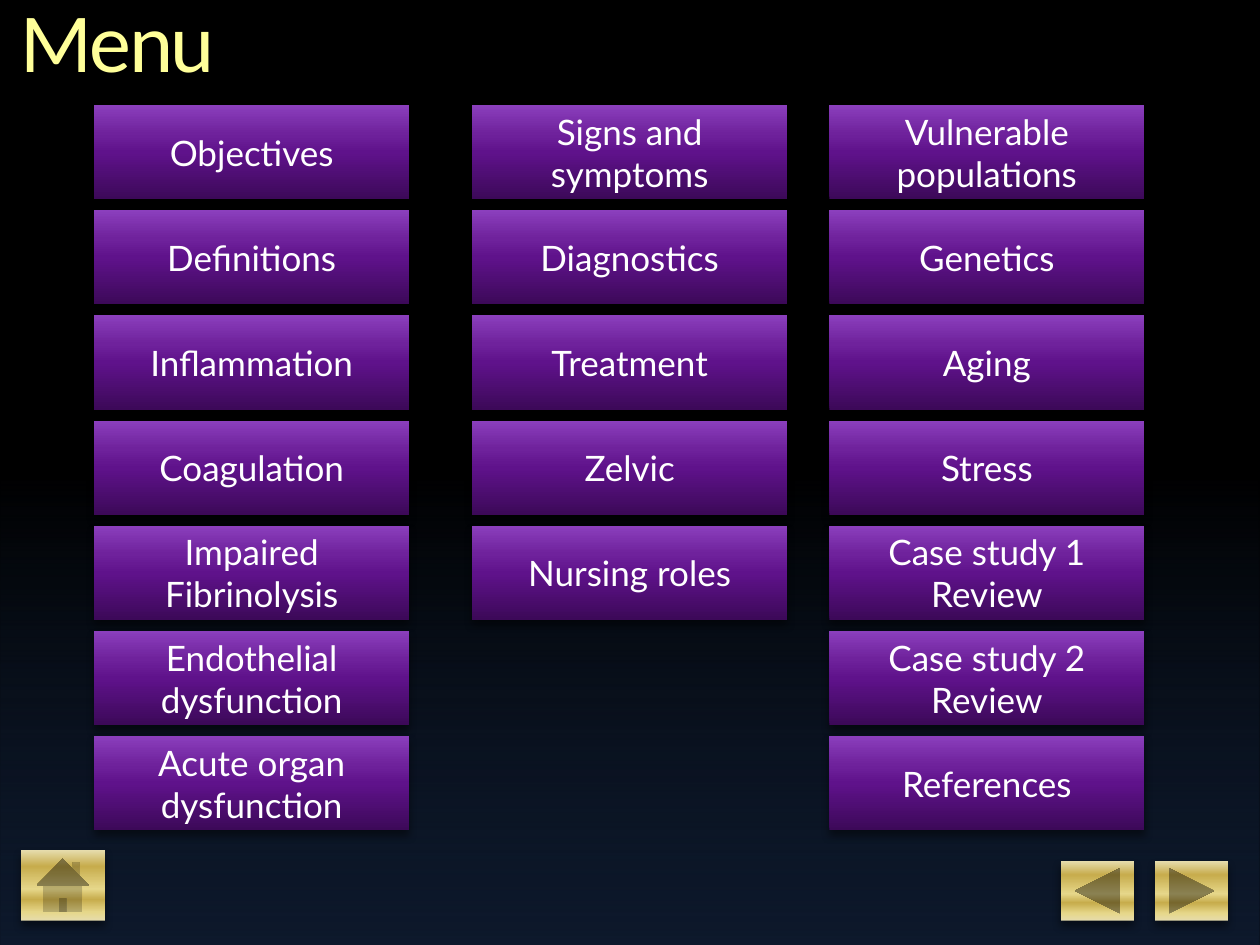
from lxml.etree import SubElement
from pptx import Presentation
from pptx.dml.color import RGBColor
from pptx.enum.shapes import MSO_SHAPE
from pptx.enum.text import MSO_ANCHOR, PP_ALIGN
from pptx.oxml.ns import qn
from pptx.util import Cm, Pt

BLACK = RGBColor(0x00, 0x00, 0x00)
WHITE = RGBColor(0xFF, 0xFF, 0xFF)
NAVY = RGBColor(0x1F, 0x3A, 0x67)
BLUE = RGBColor(0x35, 0x5F, 0xA3)
SKY = RGBColor(0x47, 0x72, 0xBA)
PALE = RGBColor(0x61, 0x90, 0xE1)
PLUM = RGBColor(0x3C, 0x09, 0x58)
GRAPE = RGBColor(0x5F, 0x12, 0x8B)
VIOLET = RGBColor(0x6F, 0x22, 0x9C)
LILAC = RGBColor(0x8B, 0x3F, 0xBD)
CREAM = RGBColor(0xE6, 0xDC, 0xAC)
STRAW = RGBColor(0xE6, 0xD7, 0x8A)
GOLD = RGBColor(0xC7, 0xAC, 0x4C)
IVORY = RGBColor(0xFF, 0xFF, 0xB9)
LEMON = RGBColor(0xFF, 0xFF, 0x99)
AMBER = RGBColor(0xF6, 0xAE, 0x1E)

NIGHT = [(0, NAVY, 42), (50, BLUE, 0), (70, SKY, 0), (100, PALE, 0)]
PURPLE = [(0, PLUM, 100), (50, GRAPE, 100), (70, VIOLET, 100), (100, LILAC, 100)]
METAL = [(0, CREAM, 100), (12, STRAW, 100), (30, GOLD, 100),
         (45, STRAW, 100), (77, GOLD, 100), (100, CREAM, 100)]
GLOW = [(0, IVORY, 100), (36, LEMON, 100), (86, AMBER, 100)]

MENU = [
    (1.9, ["Objectives", "Definitions", "Inflammation", "Coagulation",
           "Impaired Fibrinolysis", "Endothelial dysfunction",
           "Acute organ dysfunction"]),
    (9.52, ["Signs and symptoms", "Diagnostics", "Treatment", "Zelvic",
            "Nursing roles"]),
    (16.72, ["Vulnerable populations", "Genetics", "Aging", "Stress",
             "Case study 1 Review", "Case study 2 Review", "References"]),
]


def style(item, values):
    for name, value in values.items():
        setattr(item, name, value)


def tint(node, color, alpha):
    tone = SubElement(node, qn("a:srgbClr"), val=str(color))
    if alpha < 100:
        SubElement(tone, qn("a:alpha"), val=str(alpha * 1000))


def blend(fill, owner, stops, angle):
    fill.gradient()
    fill.gradient_angle = angle
    ramp = owner.find(qn("a:gradFill")).find(qn("a:gsLst"))
    for old in list(ramp):
        ramp.remove(old)
    for place, color, alpha in stops:
        tint(SubElement(ramp, qn("a:gs"), pos=str(place * 1000)), color, alpha)


def panel(slide, kind, box, stops):
    shape = slide.shapes.add_shape(kind, *map(Cm, box))
    blend(shape.fill, shape._element.spPr, stops, 90)
    shape.line.fill.background()
    shape.shadow.inherit = False
    return shape


def shade(shape):
    effects = shape._element.spPr.find(qn("a:effectLst"))
    cast = SubElement(effects, qn("a:outerShdw"), blurRad=str(Pt(5)),
                      dist=str(Pt(3)), dir="5400000", rotWithShape="0")
    tint(cast, BLACK, 45)


def backdrop(slide, box):
    style(slide.background.fill, {})
    slide.background.fill.solid()
    slide.background.fill.fore_color.rgb = BLACK
    shape = panel(slide, MSO_SHAPE.RECTANGLE, box, NIGHT)
    slide.shapes._spTree.insert(2, shape._element)


def heading(slide, box, text):
    title = slide.shapes.title
    style(title, dict(zip(("left", "top", "width", "height"), map(Cm, box))))
    frame = title.text_frame
    style(frame, {"margin_left": 0, "margin_top": 0, "margin_right": 0,
                  "margin_bottom": 0, "vertical_anchor": MSO_ANCHOR.TOP,
                  "word_wrap": True})
    line = frame.paragraphs[0]
    style(line, {"alignment": PP_ALIGN.LEFT, "line_spacing": 0.9})
    run = line.add_run()
    run.text = text
    style(run.font, {"size": Pt(48), "name": "Calibri"})
    props = run._r.get_or_add_rPr()
    props.set("spc", "-150")
    blend(run.font.fill, props, GLOW, 270)


def button(slide, box, text):
    shape = panel(slide, MSO_SHAPE.RECTANGLE, box, PURPLE)
    shade(shape)
    frame = shape.text_frame
    style(frame, {"word_wrap": True, "vertical_anchor": MSO_ANCHOR.MIDDLE})
    line = frame.paragraphs[0]
    line.alignment = PP_ALIGN.CENTER
    run = line.add_run()
    run.text = text
    style(run.font, {"size": Pt(20), "name": "Lato"})
    run.font.color.rgb = WHITE


def column(slide, box, labels):
    left, top, width, height = box
    for row, label in enumerate(labels):
        button(slide, (left, top + row * 2.12, width, height), label)


def controls(slide, box):
    left, top, width, height = box
    small = (1.48, 1.2)
    low = top + height - small[1]
    end = left + width - small[0]
    for kind, place in (
        (MSO_SHAPE.ACTION_BUTTON_FORWARD_OR_NEXT, (end, low, *small)),
        (MSO_SHAPE.ACTION_BUTTON_BACK_OR_PREVIOUS, (end - 1.9, low, *small)),
        (MSO_SHAPE.ACTION_BUTTON_HOME, (left, top, 1.7, height)),
    ):
        shade(panel(slide, kind, place, METAL))


def main():
    deck = Presentation()
    style(deck, {"slide_width": Cm(25.4), "slide_height": Cm(19.05)})
    slide = deck.slides.add_slide(deck.slide_layouts[5])
    backdrop(slide, (0, 0.2, 25.4, 18.85))
    controls(slide, (0.42, 17.14, 24.34, 1.42))
    heading(slide, (0.42, 0, 23.28, 1.86), "Menu")
    for left, labels in MENU:
        column(slide, (left, 2.12, 6.35, 1.9), labels)
    deck.save("out.pptx")


if __name__ == "__main__":
    main()
